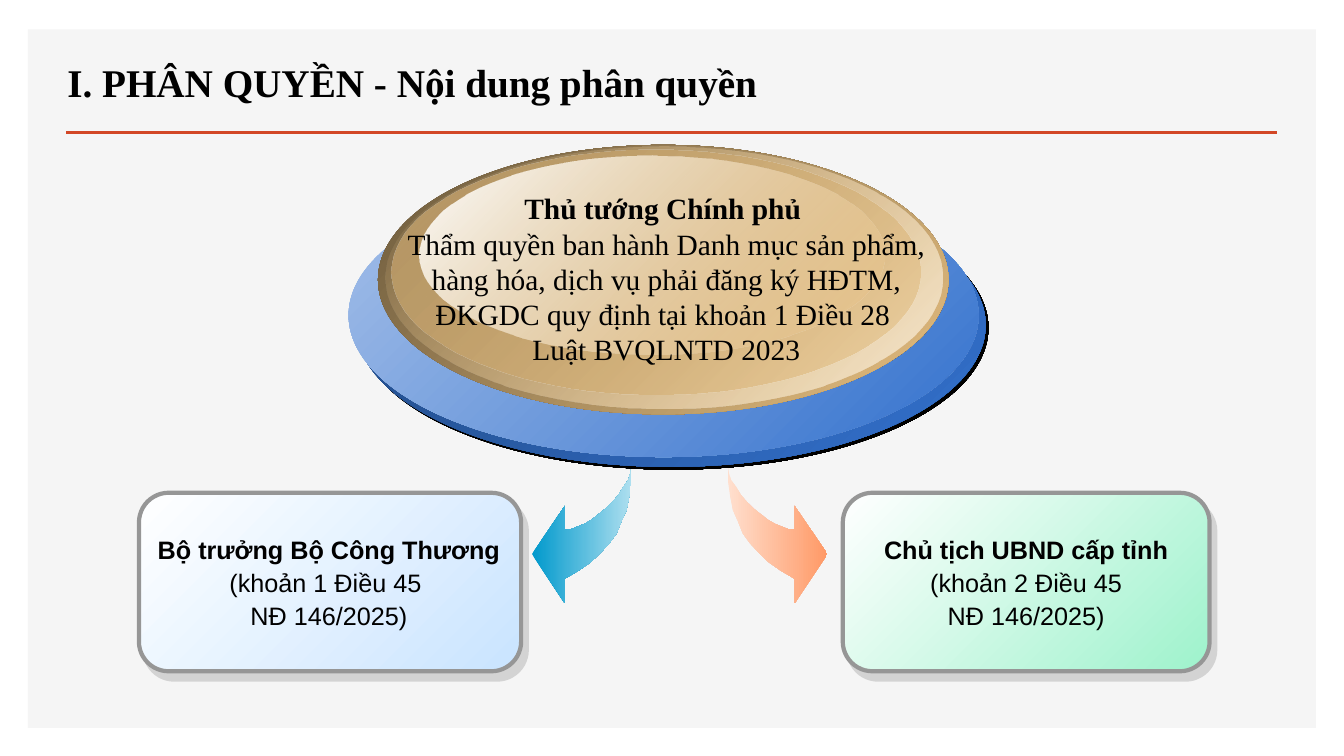
import pptx
import pptx.dml.color
import pptx.enum.shapes
import pptx.enum.text
import pptx.oxml
import pptx.oxml.ns
import pptx.util
from lxml import etree

Pt = pptx.util.Pt
SHAPE = pptx.enum.shapes.MSO_SHAPE
ALIGN = pptx.enum.text.PP_ALIGN

COLORS = {
    "panel": "F5F5F5", "rule": "D24726", "text": "000000", "white": "FFFFFF",
    "card_line": "969696", "card_shadow": "B2B2B2", "blue_card": "C9E4FF", "green_card": "9EF2CC",
    "teal": "0099CC", "pale_teal": "AEDFEF", "orange": "FF9966", "pale_orange": "FFDFCE",
    "navy": "204882", "blue": "3371CD", "sky": "A5C0E9",
    "brown": "6A583B", "gold": "E6BF80", "cream": "F6E9D3", "bronze": "B69765",
}

# Left, top, width, height, then start and end colour with opacity in percent
DISC_LAYERS = [
    (5, 7, 450, 202.5, ("navy", 100), ("blue", 100)),
    (0, 0, 450, 202.5, ("sky", 100), ("blue", 100)),
    (21, -20.5, 407.5, 192.5, ("brown", 100), ("gold", 100)),
    (26.5, -19, 397.5, 187, ("gold", 0), ("cream", 100)),
    (30.5, -17.5, 378, 175, ("bronze", 100), ("gold", 48)),
    (50.5, -13, 332.5, 142, ("white", 100), ("gold", 38)),
]

# Arrow outline pointing left, in hundredths of its box
ARROW = [
    (100, 0), (100, 11), (98, 21), (95, 32), (90, 40), (85, 49), (78, 56), (69, 63), (59, 70),
    (47, 76), (33, 82), (33, 100), (0, 64), (33, 29), (33, 46), (39, 46), (46, 44), (53, 42),
    (60, 39), (67, 35), (74, 31), (81, 26), (87, 21), (92, 15), (97, 10), (99, 5),
]


def rgb(name):
    return pptx.dml.color.RGBColor.from_string(COLORS[name])


def child(parent, tag, **attributes):
    return etree.SubElement(parent, pptx.oxml.ns.qn(tag), attributes)


def add_color(parent, name, opacity=100):
    color = child(parent, "a:srgbClr", val=COLORS[name])
    if opacity < 100:
        child(color, "a:alpha", val=str(opacity * 1000))


def set_gradient(shape, start, end, angle=45):
    shape.shadow.inherit = False
    shape.fill.background()
    properties = shape.fill._xPr
    gradient = etree.Element(pptx.oxml.ns.qn("a:gradFill"), rotWithShape="1")
    stops = child(gradient, "a:gsLst")
    for position, (name, opacity) in ((0, start), (100000, end)):
        add_color(child(stops, "a:gs", pos=str(position)), name, opacity)
    child(gradient, "a:lin", ang=str(angle * 60000), scaled="0")
    properties.replace(properties.find(pptx.oxml.ns.qn("a:noFill")), gradient)


def set_shadow(shape, name, opacity, distance, angle):
    effects = shape.fill._xPr.find(pptx.oxml.ns.qn("a:effectLst"))
    shadow = child(effects, "a:outerShdw", dist=str(Pt(distance)), dir=str(angle * 60000),
                   algn="ctr", rotWithShape="0")
    add_color(shadow, name, opacity)


def add_text(slide, box, lines, font="Arial", size=18, align=ALIGN.CENTER, spacing=None,
             top_inset=3.6):
    """Place lines of text; the first one is bold."""
    frame = slide.shapes.add_textbox(*map(Pt, box)).text_frame
    frame.word_wrap = True
    frame.margin_top = Pt(top_inset)
    for index, line in enumerate(lines):
        paragraph = frame.add_paragraph() if index else frame.paragraphs[0]
        paragraph.alignment = align
        paragraph.line_spacing = spacing
        run = paragraph.add_run()
        run.text = line
        run.font.name = font
        run.font.size = Pt(size)
        run.font.bold = index == 0
        run.font.color.rgb = rgb("text")


def add_background(slide, box):
    left, top, width, height = box
    panel = slide.shapes.add_shape(SHAPE.RECTANGLE, *map(Pt, box))
    panel.shadow.inherit = False
    panel.fill.solid()
    panel.fill.fore_color.rgb = rgb("panel")
    panel.line.fill.background()
    rule_y = Pt(top + 73.5)
    rule = slide.shapes.add_connector(pptx.enum.shapes.MSO_CONNECTOR.STRAIGHT,
                                      Pt(left + 27.5), rule_y, Pt(left + width - 28), rule_y)
    rule.line.color.rgb = rgb("rule")
    rule.line.width = Pt(2)
    child(rule._element.spPr, "a:effectLst")


def add_card(slide, box, color, lines, text_left, text_width):
    left, top, width, height = box
    card = slide.shapes.add_shape(SHAPE.ROUNDED_RECTANGLE, *map(Pt, box))
    set_gradient(card, ("white", 100), (color, 100))
    set_shadow(card, "card_shadow", 50, 7.2, 56)
    card.line.color.rgb = rgb("card_line")
    card.line.width = Pt(3)
    add_text(slide, (left + text_left, top + 23.75, text_width, 77), lines, spacing=1.1)


def add_arrow(slide, box, start, end, mirrored=False):
    left, top, width, height = box
    points = [(Pt(left + width * (100 - x if mirrored else x) / 100), Pt(top + height * y / 100))
              for x, y in ARROW]
    builder = slide.shapes.build_freeform(*points[0])
    builder.add_line_segments(points[1:], close=True)
    arrow = builder.convert_to_shape()
    set_gradient(arrow, (start, 100), (end, 100), angle=0)
    arrow.line.fill.background()


def add_disc(slide, left, top):
    group = slide.shapes.add_group_shape()
    for index, (dx, dy, width, height, start, end) in enumerate(DISC_LAYERS):
        layer = group.shapes.add_shape(SHAPE.OVAL, Pt(left + dx), Pt(top + dy), Pt(width), Pt(height))
        set_gradient(layer, start, end)
        layer.line.fill.background()
        if index == 0:
            set_shadow(layer, "text", 100, 2.8, 45)
    add_text(slide, (left + 30.5, top + 8.5, 393, 181), [
        "Thủ tướng Chính phủ ",
        "Thẩm quyền ban hành Danh mục sản phẩm, hàng hóa, dịch vụ phải đăng ký HĐTM, "
        "ĐKGDC quy định tại khoản 1 Điều 28 ",
        "Luật BVQLNTD 2023",
    ], font="Times New Roman", size=21)


def main():
    presentation = pptx.Presentation()
    presentation.slide_width, presentation.slide_height = Pt(960), Pt(540)
    slide = presentation.slides.add_slide(presentation.slide_layouts[6])

    # Panel, rule and title
    add_background(slide, (20, 21, 920, 499))
    add_text(slide, (41, 35.5, 541.5, 50), ["I. PHÂN QUYỀN - Nội dung phân quyền"],
             font="Times New Roman", size=28, align=ALIGN.LEFT, top_inset=6.5)

    # Two receiving authorities
    add_card(slide, (602, 352, 262, 127.5), "green_card",
             ["Chủ tịch UBND cấp tỉnh", " (khoản 2 Điều 45 ", "NĐ 146/2025)"], 12.25, 237.5)
    add_card(slide, (99.25, 352, 273, 127.5), "blue_card",
             ["Bộ trưởng Bộ Công Thương", "(khoản 1 Điều 45 ", "NĐ 146/2025)"], 3, 265.5)

    # Arrows from the disc to the cards
    add_arrow(slide, (380, 333, 71, 98), "teal", "pale_teal")
    add_arrow(slide, (520, 333, 71, 98), "pale_orange", "orange", mirrored=True)

    # Delegating authority
    add_disc(slide, 249, 124)

    presentation.save("out.pptx")


if __name__ == "__main__":
    main()
